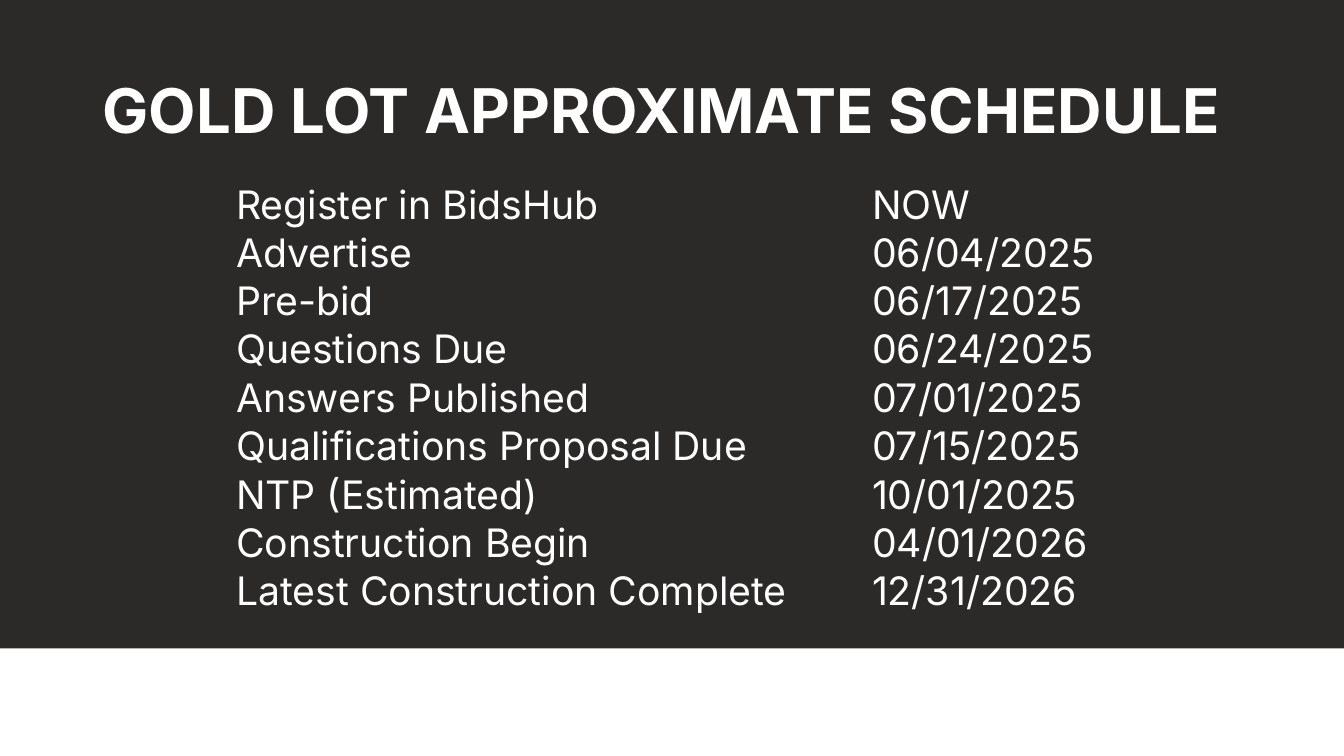
from lxml import etree
from pptx import Presentation
from pptx import util as u
from pptx.dml.color import RGBColor
from pptx.enum import shapes, text
from pptx.oxml import ns

COLOURS = {"ground": "2C2A29", "band": "FFFFFF", "ink": "FFFFFF"}
COLUMNS, ROWS = 160, 90
MILESTONES = [
    (["Register in BidsHub", "Advertise"], ["NOW", "06/04/2025"]),
    (["Pre-bid"], ["06/17/2025"]),
    (["Questions Due"], ["06/24/2025"]),
    (["Answers Published"], ["07/01/2025"]),
    (["Qualifications Proposal Due"], ["07/15/2025"]),
    (["NTP (Estimated)"], ["10/01/2025"]),
    (["Construction Begin"], ["04/01/2026"]),
    (["Latest Construction Complete"], ["12/31/2026"]),
]


def apply(target, formats):
    for name, value in formats.items():
        setattr(target, name, value)


class ScheduleSlide:
    """Holds the style and the current slide, measured on a 160 by 90 grid."""

    def __init__(self, deck):
        self.width, self.height = deck.slide_width, deck.slide_height
        self.slide = deck.slides.add_slide(deck.slide_layouts[5])
        self.paint(self.slide.background.fill, "ground")

    def paint(self, fill, colour):
        fill.solid()
        fill.fore_color.rgb = RGBColor.from_string(COLOURS[colour])

    def across(self, columns):
        return round(self.width * columns / COLUMNS)

    def down(self, rows):
        return round(self.height * rows / ROWS)

    def box(self, left, top, width, height):
        return self.across(left), self.down(top), self.across(width), self.down(height)

    def set_lines(self, frame, lines, size, bold=False, spacing=1.0):
        frame.text = "\n".join(lines)
        for paragraph in frame.paragraphs:
            apply(paragraph, {"alignment": text.PP_ALIGN.LEFT, "line_spacing": spacing})
            font = paragraph.runs[0].font
            apply(font, {"name": "Inter", "size": u.Pt(size), "bold": bold})
            font.color.rgb = RGBColor.from_string(COLOURS["ink"])

    def title(self, heading, *place):
        title = self.slide.shapes.title
        apply(title, dict(zip(("left", "top", "width", "height"), self.box(*place))))
        apply(title.text_frame, {
            "vertical_anchor": text.MSO_ANCHOR.MIDDLE,
            "auto_size": text.MSO_AUTO_SIZE.NONE,
            "word_wrap": True,
        })
        self.set_lines(title.text_frame, [heading], 44, bold=True, spacing=0.9)

    def band(self, *place):
        band = self.slide.shapes.add_shape(shapes.MSO_SHAPE.RECTANGLE, *self.box(*place))
        band.shadow.inherit = False
        self.paint(band.fill, "band")
        band.line.fill.background()

    def clear_borders(self, cell):
        properties = cell._tc.get_or_add_tcPr()
        for position, side in enumerate(("lnL", "lnR", "lnT", "lnB")):
            border = etree.Element(ns.qn(f"a:{side}"), w="0")
            etree.SubElement(border, ns.qn("a:noFill"))
            properties.insert(position, border)

    def schedule(self, milestones, left, top, widths, line_height):
        line_count = sum(len(tasks) for tasks, dates in milestones)
        place = self.box(left, top, sum(widths), line_height * line_count)
        table = self.slide.shapes.add_table(len(milestones), len(widths), *place).table
        apply(table, {"first_row": False, "horz_banding": False})
        for column, width in zip(table.columns, widths):
            column.width = self.across(width)
        for row, milestone in zip(table.rows, milestones):
            row.height = self.down(line_height * len(milestone[0]))
            for cell, lines in zip(row.cells, milestone):
                apply(cell, {
                    "margin_left": u.Inches(0.01),
                    "margin_top": u.Inches(0.01),
                    "margin_right": u.Inches(0.01),
                    "margin_bottom": 0,
                    "vertical_anchor": text.MSO_ANCHOR.MIDDLE,
                })
                cell.fill.background()
                self.clear_borders(cell)
                self.set_lines(cell.text_frame, lines, 28)


def main():
    deck = Presentation()
    apply(deck, {"slide_width": u.Inches(13.33), "slide_height": u.Inches(7.5)})
    page = ScheduleSlide(deck)
    page.band(0, 77.2, COLUMNS, ROWS - 77.2)
    page.title("GOLD LOT APPROXIMATE SCHEDULE", 11, 4.8, 138, 17.4)
    page.schedule(MILESTONES, 28, 21.5, (75.7, 53.5), 5.65)
    deck.save("out.pptx")


if __name__ == "__main__":
    main()
